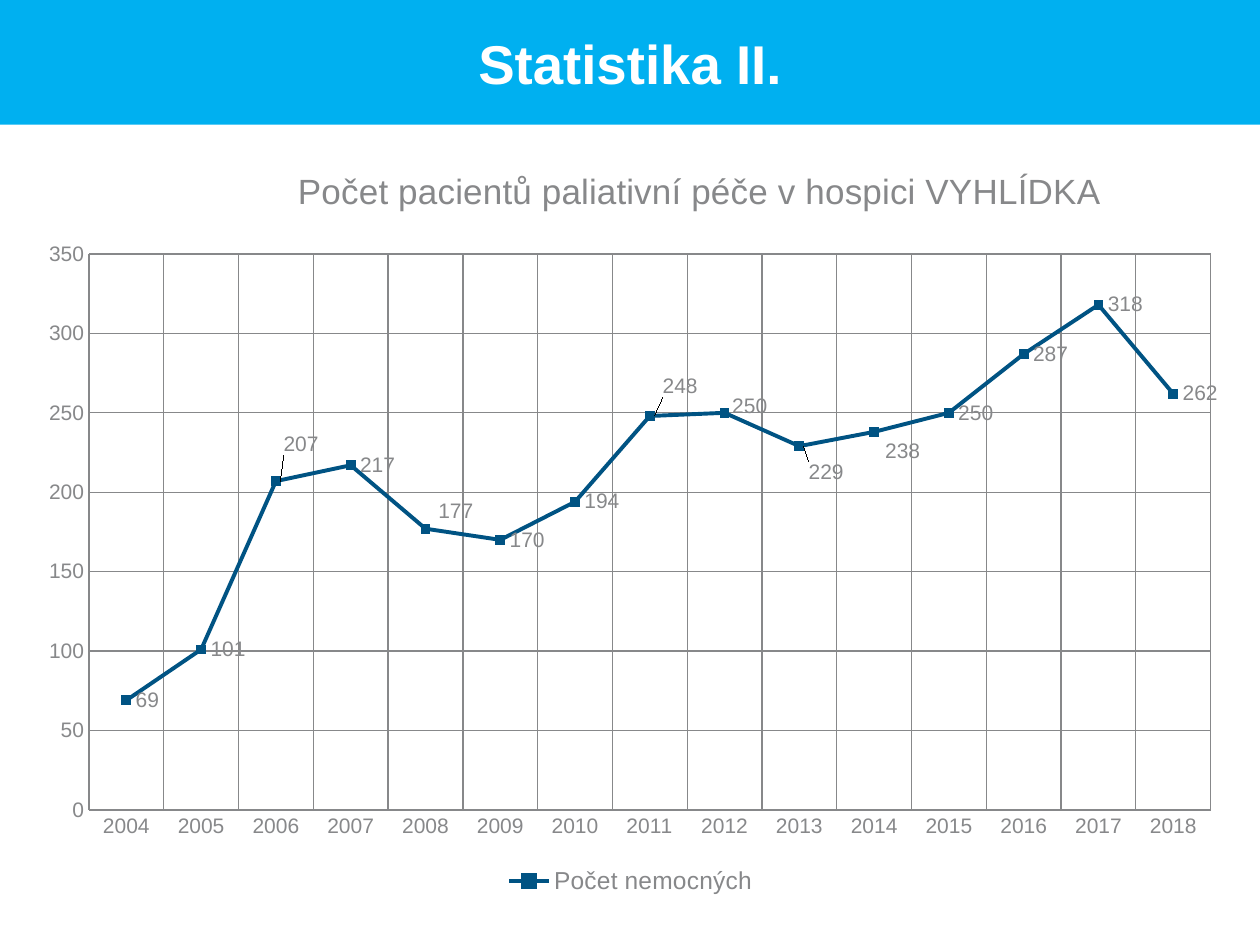
from dataclasses import dataclass
from typing import Any

from lxml import etree
from pptx import Presentation
from pptx import util as u
from pptx.chart import data as chart_data
from pptx.dml import color
from pptx.enum import chart as ch
from pptx.enum import shapes, text
from pptx.oxml import ns

NAVY = "005383"
GREY = "87888A"
BANNER_BLUE = "00B0F0"
WHITE = "FFFFFF"
CHART_WIDTH, CHART_HEIGHT = 692, 425.5

FIRST_YEAR = 2004
PATIENTS = (69, 101, 207, 217, 177, 170, 194, 248, 250, 229, 238, 250, 287, 318, 262)


@dataclass
class LabelShift:
    year: int
    right: float
    down: float


LABEL_SHIFTS = (
    LabelShift(2006, -1, -21),
    LabelShift(2008, 2, -10),
    LabelShift(2011, 2, -17),
    LabelShift(2012, -1, -4),
    LabelShift(2013, 0, 15),
    LabelShift(2014, 1, 11),
)


def rgb(hex_value: str) -> color.RGBColor:
    return color.RGBColor.from_string(hex_value)


def apply(target: Any, values: dict[str, Any]) -> None:
    for name, value in values.items():
        setattr(target, name, value)


def style_font(font: Any, size: float, hex_value: str, bold: bool = False) -> None:
    apply(font, {"name": "Arial", "size": u.Pt(size), "bold": bold})
    font.color.rgb = rgb(hex_value)


def style_line(line: Any, width: float, hex_value: str) -> None:
    line.color.rgb = rgb(hex_value)
    line.width = u.Pt(width)


def place(part: Any, index: int, settings: dict[str, Any]) -> None:
    for old in part.findall(ns.qn("c:layout")):
        part.remove(old)
    layout = etree.Element(ns.qn("c:layout"))
    manual = etree.SubElement(layout, ns.qn("c:manualLayout"))
    for name, value in settings.items():
        etree.SubElement(manual, ns.qn(f"c:{name}"), val=str(value))
    part.insert(index, layout)


def style_axis(axis: Any) -> None:
    apply(axis, {
        "has_major_gridlines": True,
        "major_tick_mark": ch.XL_TICK_MARK.NONE,
        "minor_tick_mark": ch.XL_TICK_MARK.NONE,
    })
    style_font(axis.tick_labels.font, 12, GREY)
    style_line(axis.format.line, 0.75, GREY)
    style_line(axis.major_gridlines.format.line, 0.75, GREY)


def style_series(series: Any) -> None:
    series.smooth = False
    style_line(series.format.line, 2.25, NAVY)
    apply(series.marker, {"style": ch.XL_MARKER_STYLE.SQUARE, "size": 5})
    series.marker.format.fill.solid()
    series.marker.format.fill.fore_color.rgb = rgb(NAVY)
    style_line(series.marker.format.line, 0.75, NAVY)
    labels = series.data_labels
    apply(labels, {"show_value": True, "position": ch.XL_LABEL_POSITION.RIGHT})
    style_font(labels.font, 12, GREY)
    for shift in LABEL_SHIFTS:
        label = series.points[shift.year - FIRST_YEAR].data_label
        label.position = ch.XL_LABEL_POSITION.RIGHT
        style_font(label.font, 12, GREY)
    for element, shift in zip(series._element.xpath("c:dLbls/c:dLbl"), LABEL_SHIFTS):
        place(element, 1, {
            "x": round(shift.right / CHART_WIDTH, 4),
            "y": round(shift.down / CHART_HEIGHT, 4),
        })


def add_patient_chart(slide: Any) -> None:
    patients = chart_data.CategoryChartData()
    patients.categories = [str(FIRST_YEAR + i) for i in range(len(PATIENTS))]
    patients.add_series("Počet nemocných", PATIENTS)
    chart = slide.shapes.add_chart(
        ch.XL_CHART_TYPE.LINE_MARKERS, u.Pt(14.4), u.Pt(88.6),
        u.Pt(CHART_WIDTH), u.Pt(CHART_HEIGHT), patients,
    ).chart
    apply(chart.font, {"name": "Calibri", "size": u.Pt(16)})

    heading = chart.chart_title.text_frame.paragraphs[0].add_run()
    heading.text = "Počet pacientů paliativní péče v hospici VYHLÍDKA"
    style_font(heading.font, 20, GREY)
    chart.chart_title.include_in_layout = False
    place(chart.chart_title._element, 1, {
        "xMode": "edge", "yMode": "edge", "x": 0.22, "y": 0.01,
    })

    chart.has_legend = True
    apply(chart.legend, {
        "position": ch.XL_LEGEND_POSITION.BOTTOM, "include_in_layout": False,
    })
    style_font(chart.legend.font, 14, GREY)
    for axis in (chart.category_axis, chart.value_axis):
        style_axis(axis)
    apply(chart.value_axis, {"minimum_scale": 0, "maximum_scale": 350, "major_unit": 50})

    plot = chart.plots[0]
    plot.vary_by_categories = False
    style_series(plot.series[0])
    place(chart._chartSpace.chart.plotArea, 0, {
        "layoutTarget": "inner", "xMode": "edge", "yMode": "edge",
        "x": round(36.5 / CHART_WIDTH, 4), "y": round(56.6 / CHART_HEIGHT, 4),
        "w": round(641 / CHART_WIDTH, 4), "h": round(317.7 / CHART_HEIGHT, 4),
    })


def add_banner(slide: Any, width: int) -> None:
    banner = slide.shapes.add_shape(
        shapes.MSO_SHAPE.RECTANGLE, 0, 0, width, u.Pt(71.3))
    banner.shadow.inherit = False
    banner.fill.solid()
    banner.fill.fore_color.rgb = rgb(BANNER_BLUE)
    banner.line.fill.background()
    frame = banner.text_frame
    apply(frame, {"word_wrap": True, "vertical_anchor": text.MSO_ANCHOR.MIDDLE})
    paragraph = frame.paragraphs[0]
    paragraph.alignment = text.PP_ALIGN.CENTER
    title = paragraph.add_run()
    title.text = "Statistika II."
    style_font(title.font, 31.2, WHITE, bold=True)


def main() -> None:
    deck = Presentation()
    apply(deck, {"slide_width": u.Pt(720), "slide_height": u.Pt(540)})
    slide = deck.slides.add_slide(deck.slide_layouts[6])
    add_patient_chart(slide)
    add_banner(slide, deck.slide_width)
    deck.save("out.pptx")


if __name__ == "__main__":
    main()
